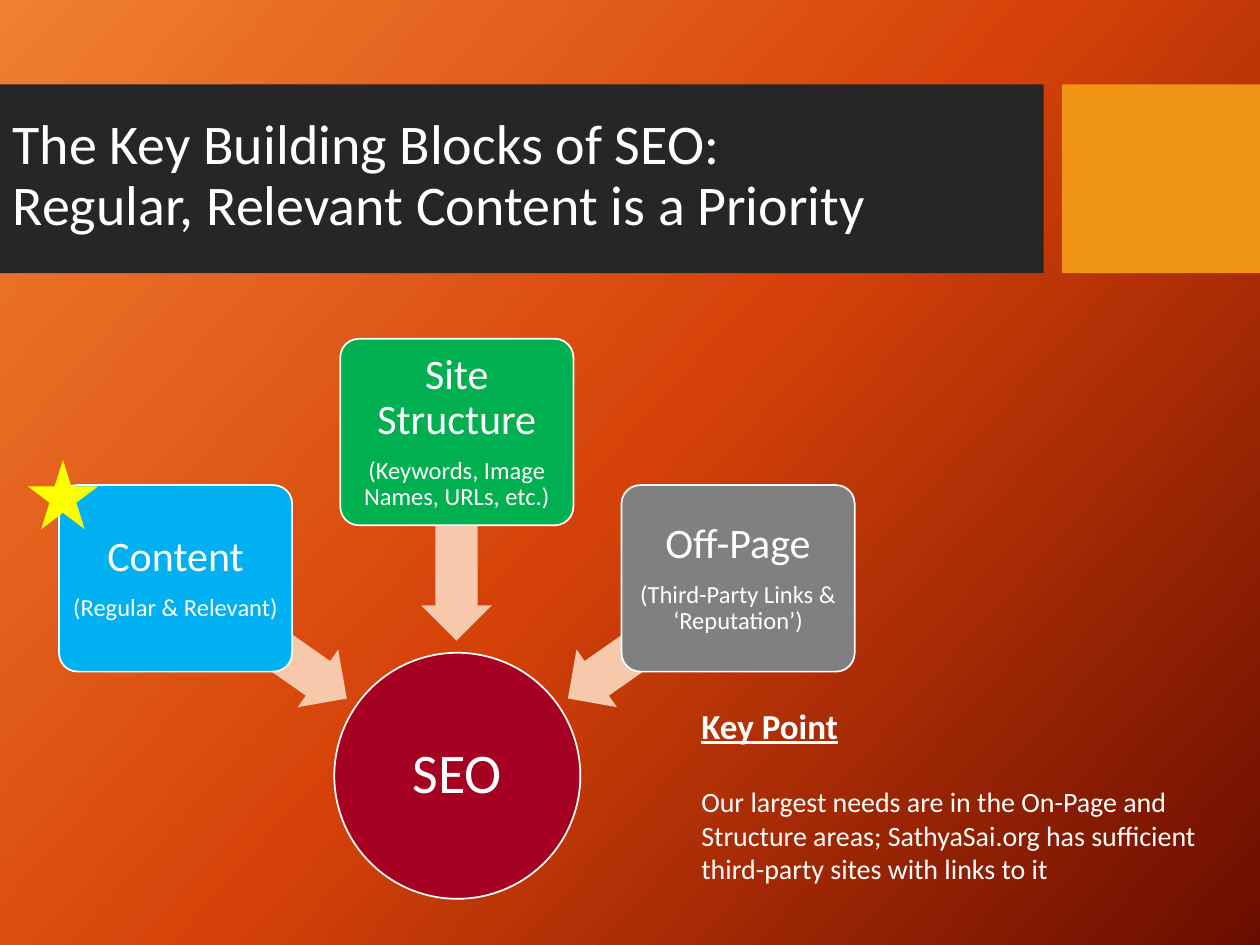
from copy import deepcopy
from pptx import Presentation
from pptx.dml.color import RGBColor
from pptx.enum.shapes import MSO_SHAPE
from pptx.enum.text import MSO_ANCHOR, MSO_AUTO_SIZE, PP_ALIGN
from pptx.oxml.ns import qn
from pptx.util import Cm, Pt

RECT, ROUND, OVAL = MSO_SHAPE.RECTANGLE, MSO_SHAPE.ROUNDED_RECTANGLE, MSO_SHAPE.OVAL
ARROW, STAR = MSO_SHAPE.LEFT_ARROW, MSO_SHAPE.STAR_5_POINT
MIDDLE, CENTER, LEFT = MSO_ANCHOR.MIDDLE, PP_ALIGN.CENTER, PP_ALIGN.LEFT
COLORS = {
    "bg_light": "F18031", "bg_mid": "D54209", "bg_dark": "6A0D00",
    "bar": "262626", "accent": "F09415", "white": "FFFFFF",
    "seo": "A50021", "arrow": "F6C8AC", "star": "FFFF00",
    "content": "00B0F0", "structure": "00B050", "offpage": "808080",
}
C = {name: RGBColor.from_string(value) for name, value in COLORS.items()}


def add_shape(kind, x, y, w, h, color, outlined=False):
    sp = s.shapes.add_shape(kind, Cm(x), Cm(y), Cm(w), Cm(h))
    sp.shadow.inherit = False
    sp.fill.solid()
    sp.fill.fore_color.rgb = C[color]
    if outlined:
        sp.line.color.rgb = C["white"]
        sp.line.width = Pt(1)
    else:
        sp.line.fill.background()
    return sp


def write(tf, lines, align=LEFT, spacing=None, margin=None):
    """Fill a text frame with (text, size) lines."""
    tf.word_wrap = True
    if margin is not None:
        tf.margin_left = tf.margin_right = tf.margin_top = tf.margin_bottom = Cm(margin)
    for i, (text, size) in enumerate(lines):
        p = tf.paragraphs[0] if i == 0 else tf.add_paragraph()
        p.text = text
        p.alignment = align
        p.line_spacing = spacing
        p.font.name = "Calibri"
        p.font.size = Pt(size)
        p.font.color.rgb = C["white"]


prs = Presentation()
prs.slide_width, prs.slide_height = Cm(25.4), Cm(19.05)
s = prs.slides.add_slide(prs.slide_layouts[5])

# Gradient background with three stops
fill = s.background.fill
fill.gradient()
fill.gradient_angle = 318
stops = s.element.find(".//" + qn("a:gsLst"))
stops.insert(1, deepcopy(stops[0]))
for stop, pos, color in zip(fill.gradient_stops, (0, 0.5, 1), ("bg_light", "bg_mid", "bg_dark")):
    stop.position = pos
    stop.color.rgb = C[color]

# Title on its bar
add_shape(RECT, 0, 1.7, 21.04, 3.81, "bar")
add_shape(RECT, 21.41, 1.7, 3.99, 3.81, "accent")
title = s.shapes.title
title.left, title.top, title.width, title.height = Cm(0), Cm(2.34), Cm(21.79), Cm(2.46)
title.text_frame.auto_size = MSO_AUTO_SIZE.NONE
title.text_frame.vertical_anchor = MIDDLE
write(title.text_frame,
      [("The Key Building Blocks of SEO:\vRegular, Relevant Content is a Priority", 32)], spacing=0.9)
s.shapes.element.append(title.element)  # bring in front of the bars

# Hub
sp = add_shape(OVAL, 6.74, 13.16, 4.96, 4.96, "seo", outlined=True)
write(sp.text_frame, [("SEO", 32)], CENTER, 0.9, 0.05)

# Building blocks, each with an arrow behind it pointing to the hub
blocks = [
    ("Content", "(Regular & Relevant)", "content", 9.78, (3.18, 12.17), 215),
    ("Site Structure", "(Keywords, Image Names, URLs, etc.)", "structure", 6.83, (7.11, 10.11), 270),
    ("Off-Page", "(Third-Party Links & ‘Reputation’)", "offpage", 9.78, (11.07, 12.17), 325),
]
for i, (name, detail, color, top, (ax, ay), angle) in enumerate(blocks):
    sp = add_shape(ARROW, ax, ay, 4.19, 1.42, "arrow")
    sp.adjustments[0], sp.adjustments[1] = 0.6, 0.5
    sp.rotation = angle
    sp = add_shape(ROUND, 1.19 + 5.67 * i, top, 4.7, 3.76, color, outlined=True)
    sp.adjustments[0] = 0.1
    tf = sp.text_frame
    tf.vertical_anchor = MIDDLE
    write(tf, [(name, 24), (detail, 14)], CENTER, 0.9, 0.13)
    tf.paragraphs[0].space_after = Pt(8.4)

# Key point
tf = s.shapes.add_textbox(Cm(13.89), Cm(14.07), Cm(10.77), Cm(3.94)).text_frame
write(tf, [("Key Point", 20),
           ("Our largest needs are in the On-Page and Structure areas; "
            "SathyaSai.org has sufficient third-party sites with links to it", 16)])
heading, body = tf.paragraphs
heading.font.bold = heading.font.underline = True
body.space_before = Pt(22)

# Priority star on the content block
add_shape(STAR, 0.56, 9.27, 1.42, 1.4, "star")

prs.save("out.pptx")
